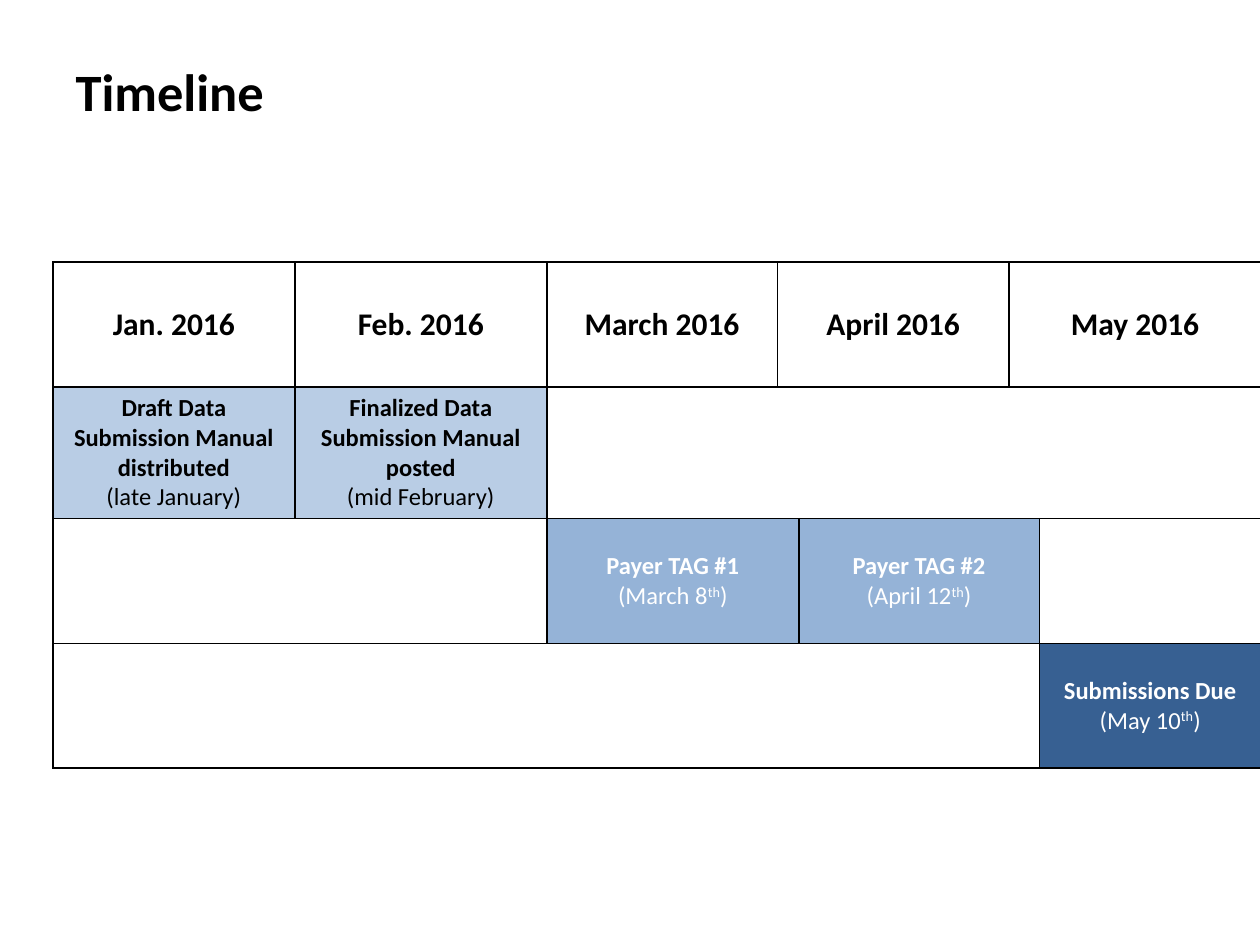
"""Build a payer submission timeline slide."""
from dataclasses import dataclass

import lxml.etree
import pptx
import pptx.dml.color
import pptx.enum.text
import pptx.oxml.ns
import pptx.table
import pptx.text.text
import pptx.util

Inches = pptx.util.Inches


@dataclass(frozen=True)
class Theme:
    """Colours, font and type sizes of the slide."""

    font: str = "Calibri"
    black: str = "000000"
    white: str = "FFFFFF"
    manual: str = "B9CDE5"
    meeting: str = "95B3D7"
    deadline: str = "376092"
    title_size: int = 30
    month_size: int = 18
    event_size: int = 14
    border_width: int = 1


@dataclass(frozen=True)
class Entry:
    """A table cell with its place, span, wording and look."""

    row: int
    column: int
    span: int = 1
    heading: str = ""
    date: str = ""
    ordinal: str = ""
    fill: str = ""
    color: str = Theme.black
    size: int = Theme.event_size


THEME = Theme()
COLUMN_WIDTHS = (1.92, 2, 1.83, 0.17, 1.67, 0.13, 1.76)
ROW_HEIGHTS = (0.99, 1.03, 0.99, 0.99)
MONTHS = (
    (0, 1, "Jan. 2016"),
    (1, 1, "Feb. 2016"),
    (2, 1, "March 2016"),
    (3, 2, "April 2016"),
    (5, 2, "May 2016"),
)
ENTRIES = [
    Entry(0, column, span, month, size=THEME.month_size) for column, span, month in MONTHS
] + [
    Entry(1, 0, 1, "Draft Data Submission Manual distributed", "(late January)", fill=THEME.manual),
    Entry(1, 1, 1, "Finalized Data Submission Manual posted", "(mid February)", fill=THEME.manual),
    Entry(1, 2, 5, fill=THEME.white),
    Entry(2, 0, 2, fill=THEME.white),
    Entry(2, 2, 2, "Payer TAG #1", "(March 8", "th", THEME.meeting, THEME.white),
    Entry(2, 4, 2, "Payer TAG #2", "(April 12", "th", THEME.meeting, THEME.white),
    Entry(2, 6),
    Entry(3, 0, 6),
    Entry(3, 6, 1, "Submissions Due", "(May 10", "th", THEME.deadline, THEME.white),
]


def format_run(run: pptx.text.text._Run, size: int, color: str, bold: bool) -> None:
    """Apply the slide font to a run."""
    run.font.name = THEME.font
    run.font.size = pptx.util.Pt(size)
    run.font.bold = bold
    run.font.color.rgb = pptx.dml.color.RGBColor.from_string(color)


def add_borders(cell: pptx.table._Cell) -> None:
    """Draw a solid line on all four sides of a cell."""
    properties = cell._tc.get_or_add_tcPr()
    qualify = pptx.oxml.ns.qn
    for position, side in enumerate(("a:lnL", "a:lnR", "a:lnT", "a:lnB")):
        line = lxml.etree.Element(qualify(side), w=str(pptx.util.Pt(THEME.border_width)))
        fill = lxml.etree.SubElement(line, qualify("a:solidFill"))
        lxml.etree.SubElement(fill, qualify("a:srgbClr"), val=THEME.black)
        properties.insert(position, line)


def write_entry(cell: pptx.table._Cell, entry: Entry) -> None:
    """Write a bold heading and a plain date into a cell."""
    cell.vertical_anchor = pptx.enum.text.MSO_ANCHOR.MIDDLE
    text_frame = cell.text_frame
    text_frame.text = "\n".join(filter(None, (entry.heading, entry.date)))
    if entry.ordinal:
        date = text_frame.paragraphs[1]
        suffix = date.add_run()
        suffix.text = entry.ordinal
        suffix._r.get_or_add_rPr().set("baseline", "30000")
        date.add_run().text = ")"
    for index, paragraph in enumerate(text_frame.paragraphs):
        paragraph.alignment = pptx.enum.text.PP_ALIGN.CENTER
        for run in paragraph.runs:
            format_run(run, entry.size, entry.color, bold=index == 0)


def draw_entry(table: pptx.table.Table, entry: Entry) -> None:
    """Merge, fill and write one table entry."""
    cell = table.cell(entry.row, entry.column)
    if entry.span > 1:
        cell.merge(table.cell(entry.row, entry.column + entry.span - 1))
    if entry.fill:
        cell.fill.solid()
        cell.fill.fore_color.rgb = pptx.dml.color.RGBColor.from_string(entry.fill)
    if entry.heading:
        write_entry(cell, entry)


def main() -> None:
    """Create the slide and save it."""
    presentation = pptx.Presentation()
    presentation.slide_width, presentation.slide_height = Inches(10), Inches(7.5)
    slide = presentation.slides.add_slide(presentation.slide_layouts[5])

    title = slide.shapes.title
    title.left, title.top = Inches(0.5), Inches(0.42)
    title.width, title.height = Inches(8.5), Inches(0.61)
    title.text_frame.text = "Timeline"
    title.text_frame.vertical_anchor = pptx.enum.text.MSO_ANCHOR.TOP
    paragraph = title.text_frame.paragraphs[0]
    paragraph.alignment = pptx.enum.text.PP_ALIGN.LEFT
    format_run(paragraph.runs[0], THEME.title_size, THEME.black, bold=True)

    table = slide.shapes.add_table(
        len(ROW_HEIGHTS), len(COLUMN_WIDTHS), Inches(0.42), Inches(2.08),
        Inches(sum(COLUMN_WIDTHS)), Inches(sum(ROW_HEIGHTS)),
    ).table
    table.first_row = table.horz_banding = False
    for column, width in zip(table.columns, COLUMN_WIDTHS):
        column.width = Inches(width)
    for row, height in zip(table.rows, ROW_HEIGHTS):
        row.height = Inches(height)
    for cell in table.iter_cells():
        cell.fill.background()
        add_borders(cell)
    for entry in ENTRIES:
        draw_entry(table, entry)
    presentation.save("out.pptx")


if __name__ == "__main__":
    main()
